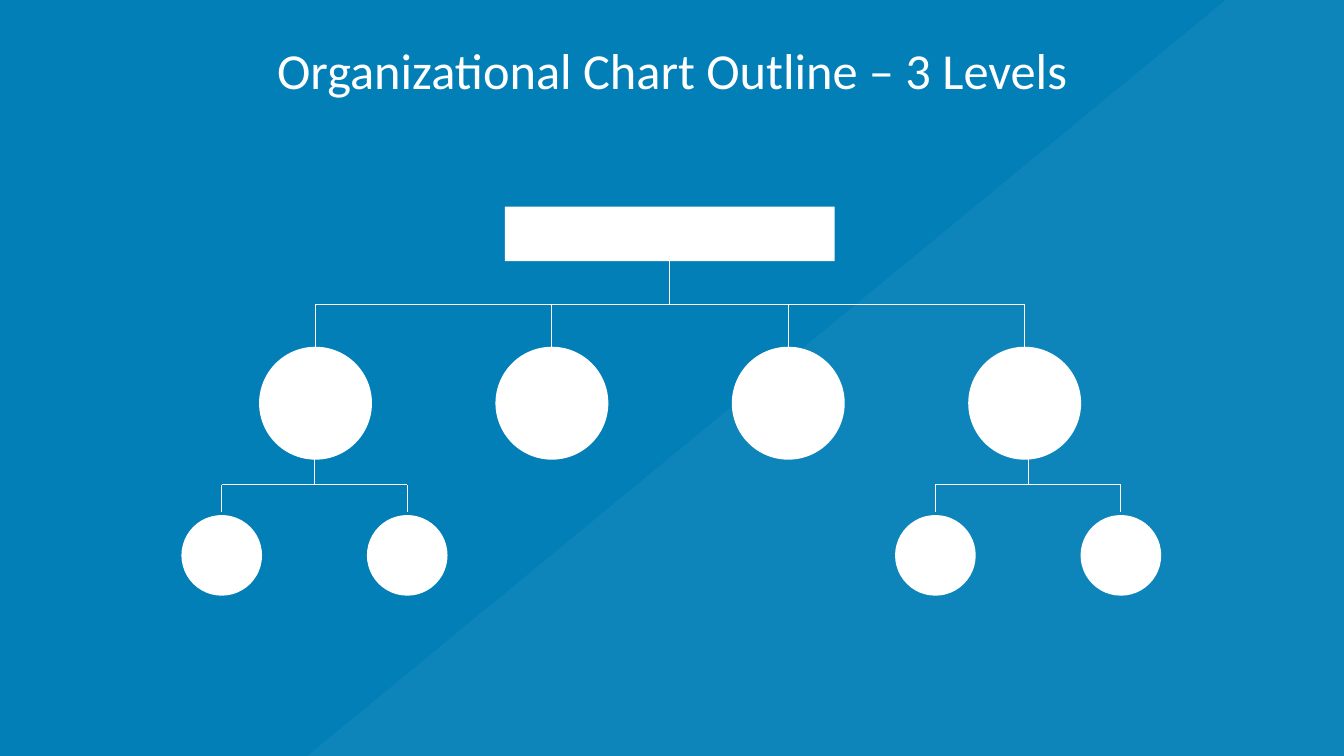
from dataclasses import dataclass

from lxml import etree
from pptx import Presentation, util as u
from pptx.dml.color import RGBColor
from pptx.enum import shapes, text
from pptx.oxml import ns


@dataclass(frozen=True)
class Theme:
    background: RGBColor = RGBColor(0x02, 0x7F, 0xB7)
    foreground: RGBColor = RGBColor(0xFF, 0xFF, 0xFF)
    band_opacity: int = 5
    font: str = "Calibri"
    title_size: float = 36
    line_width: float = 0.75


@dataclass(frozen=True)
class Box:
    column: float
    row: float
    columns: float
    rows: float


@dataclass(frozen=True)
class Level:
    top: float
    diameter: float
    centers: tuple[float, ...]


@dataclass(frozen=True)
class Fork:
    stem: float
    top: float
    bar: float
    foot: float
    drops: tuple[float, ...]


THEME = Theme()
CELL = u.Inches(0.1)
COLUMNS, ROWS = 133.33, 75

TITLE = Box(6.7, 3, 120, 7.8)
LEADER = Box(50.1, 20.5, 32.7, 5.4)
BAND = ((30.5, ROWS), (121.6, 0), (COLUMNS, 0), (COLUMNS, ROWS))

MANAGER_CENTERS = tuple(31.3 + 23.45 * index for index in range(4))
TEAM_STEMS = (31.2, 102)
TEAM_REACH = 9.2


def grid(cells: float) -> u.Emu:
    return u.Emu(round(cells * CELL))


def place(box: Box) -> tuple[u.Emu, ...]:
    return tuple(grid(cells) for cells in (box.column, box.row, box.columns, box.rows))


def paint(shape) -> None:
    shape.shadow.inherit = False
    shape.fill.solid()
    shape.fill.fore_color.rgb = THEME.foreground
    shape.line.fill.background()


def add_band(slide) -> None:
    start, *corners = [(grid(column), grid(row)) for column, row in BAND]
    builder = slide.shapes.build_freeform(*start)
    builder.add_line_segments(corners, close=True)
    band = builder.convert_to_shape()
    paint(band)
    color = band.element.spPr.find(f"{ns.qn('a:solidFill')}/{ns.qn('a:srgbClr')}")
    etree.SubElement(color, ns.qn("a:alpha"), val=str(THEME.band_opacity * 1000))


def add_solid(slide, kind: shapes.MSO_SHAPE, box: Box):
    shape = slide.shapes.add_shape(kind, *place(box))
    paint(shape)
    return shape


def add_line(slide, start: tuple[float, float], end: tuple[float, float]):
    points = [grid(cells) for cells in (*start, *end)]
    line = slide.shapes.add_connector(shapes.MSO_CONNECTOR.STRAIGHT, *points)
    line.line.color.rgb = THEME.foreground
    line.line.width = u.Pt(THEME.line_width)
    etree.SubElement(line.element.spPr, ns.qn("a:effectLst"))
    return line


def add_fork(slide, fork: Fork):
    stem = add_line(slide, (fork.stem, fork.top), (fork.stem, fork.bar))
    add_line(slide, (fork.drops[0], fork.bar), (fork.drops[-1], fork.bar))
    for drop in fork.drops:
        add_line(slide, (drop, fork.bar), (drop, fork.foot))
    return stem


def add_level(slide, level: Level) -> None:
    for center in level.centers:
        left = center - level.diameter / 2
        box = Box(left, level.top, level.diameter, level.diameter)
        add_solid(slide, shapes.MSO_SHAPE.OVAL, box)


def add_text(slide, content: str, box: Box, *, size: float, color: RGBColor,
             align: text.PP_ALIGN, anchor: text.MSO_ANCHOR) -> None:
    frame = slide.shapes.add_textbox(*place(box)).text_frame
    frame.word_wrap = True
    frame.vertical_anchor = anchor
    frame.margin_left = frame.margin_right = u.Inches(0.13)
    frame.margin_top = frame.margin_bottom = u.Inches(0.07)
    paragraph = frame.paragraphs[0]
    paragraph.alignment = align
    run = paragraph.add_run()
    run.text = content
    run.font.name = THEME.font
    run.font.size = u.Pt(size)
    run.font.color.rgb = color


def main() -> None:
    presentation = Presentation()
    presentation.slide_width = grid(COLUMNS)
    presentation.slide_height = grid(ROWS)
    slide = presentation.slides.add_slide(presentation.slide_layouts[6])
    slide.background.fill.solid()
    slide.background.fill.fore_color.rgb = THEME.background

    add_band(slide)

    leader = add_solid(slide, shapes.MSO_SHAPE.RECTANGLE, LEADER)
    leader_center = LEADER.column + LEADER.columns / 2
    leader_bottom = LEADER.row + LEADER.rows
    stem = add_fork(slide, Fork(leader_center, leader_bottom, 30.2, 34.6, MANAGER_CENTERS))
    stem.begin_connect(leader, 2)
    add_level(slide, Level(34.4, 11.2, MANAGER_CENTERS))

    for center in TEAM_STEMS:
        members = (center - TEAM_REACH, center + TEAM_REACH)
        add_fork(slide, Fork(center, 45.4, 48.1, 50.8, members))
        add_level(slide, Level(51.1, 8, members))

    add_text(slide, "Organizational Chart Outline – 3 Levels", TITLE,
             size=THEME.title_size, color=THEME.foreground,
             align=text.PP_ALIGN.CENTER, anchor=text.MSO_ANCHOR.MIDDLE)

    presentation.save("out.pptx")


if __name__ == "__main__":
    main()
